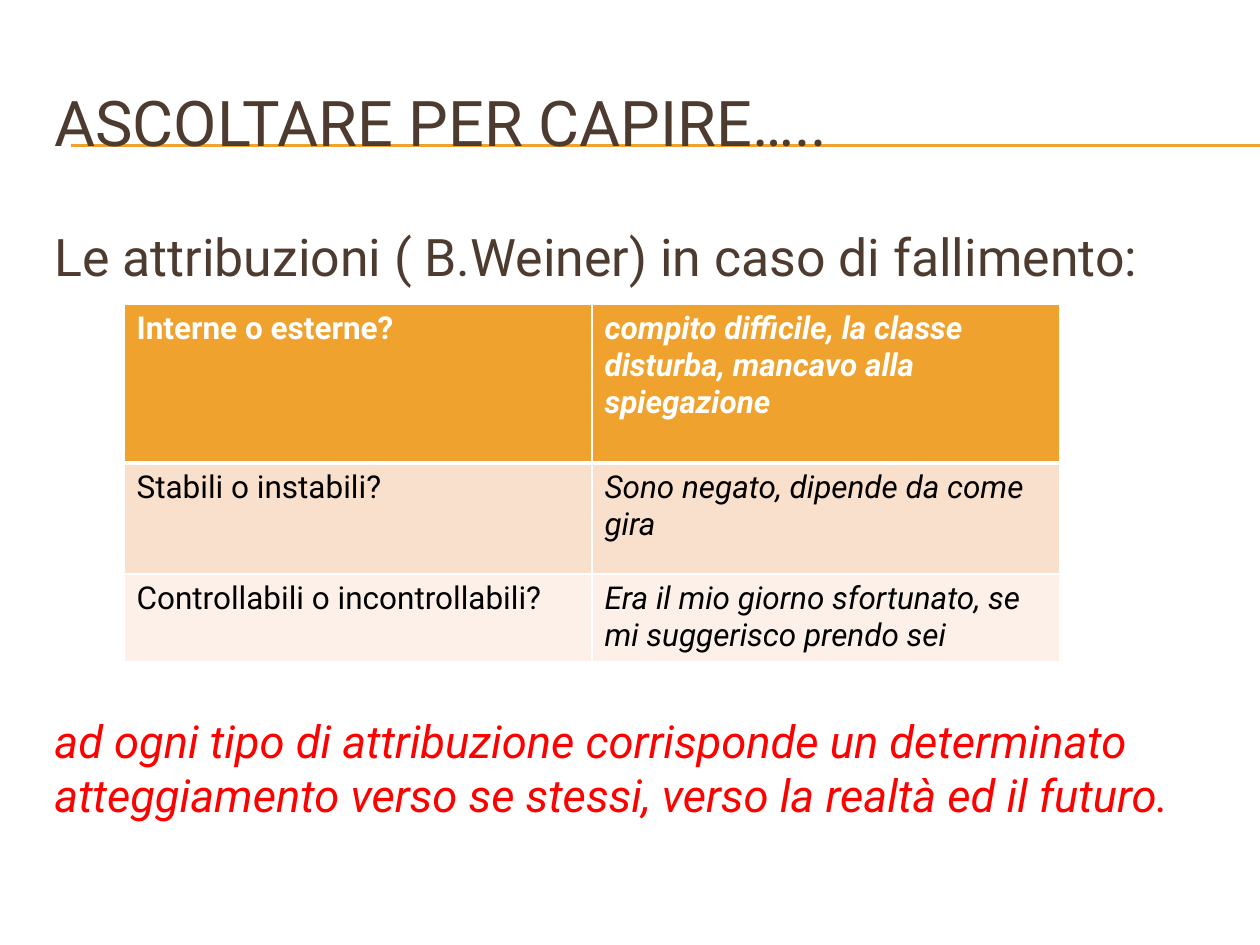
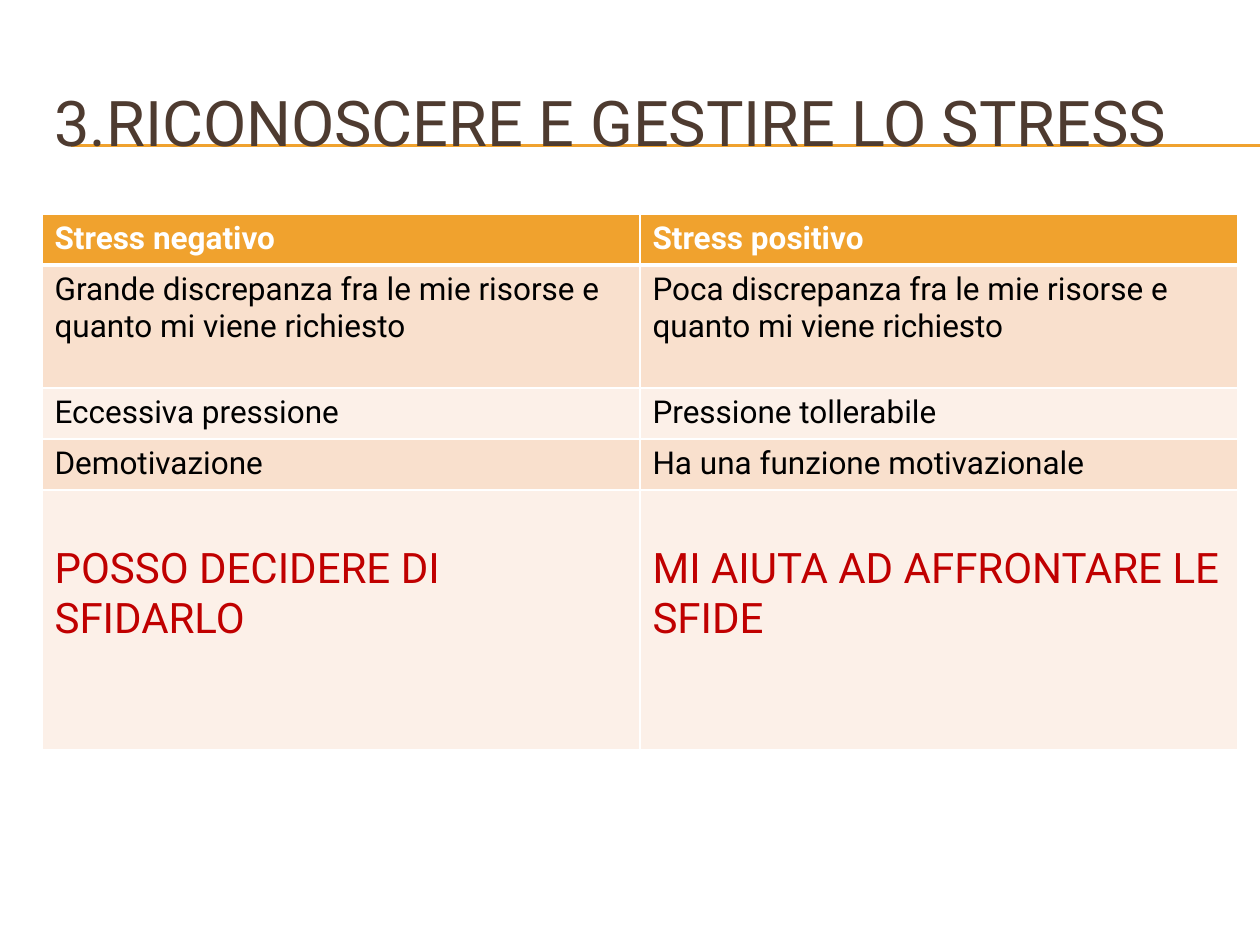
from lxml.etree import SubElement
from pptx import Presentation
from pptx.dml.color import RGBColor
from pptx.enum.shapes import MSO_CONNECTOR
from pptx.enum.text import MSO_ANCHOR as Anchor
from pptx.oxml.ns import qn
from pptx.util import Emu, Pt

PX = 914400 / 126
WIDTH, HEIGHT = 1260, 945
FONT = "Roboto"

WHITE = RGBColor(0xFF, 0xFF, 0xFF)
BLACK = RGBColor(0x00, 0x00, 0x00)
BROWN = RGBColor(0x4E, 0x3B, 0x30)
ORANGE = RGBColor(0xF0, 0xA2, 0x2E)
PEACH = RGBColor(0xF9, 0xE0, 0xCD)
CREAM = RGBColor(0xFC, 0xF0, 0xE8)
RED = RGBColor(0xFF, 0x00, 0x00)
DARK_RED = RGBColor(0xC0, 0x00, 0x00)

TITLE_BOX = (42, 63, 1197, 116)
RULE_LEFT, RULE_TOPS = 71, (145, 146)


def px(length):
    return Emu(round(length * PX))


def write(paragraph, text, size, color, bold=False, italic=False):
    paragraph.text = text
    font = paragraph.font
    font.name, font.size = FONT, Pt(size)
    font.bold, font.italic = bold, italic
    font.color.rgb = color


def add_text(slide, box, text, size, color, italic=False, anchor=Anchor.TOP):
    frame = slide.shapes.add_textbox(*map(px, box)).text_frame
    frame.word_wrap = True
    frame.vertical_anchor = anchor
    write(frame.paragraphs[0], text, size, color, italic=italic)


def add_titled_slide(presentation, title):
    slide = presentation.slides.add_slide(presentation.slide_layouts[6])
    # Double rule behind the title
    for top in RULE_TOPS:
        rule = slide.shapes.add_connector(
            MSO_CONNECTOR.STRAIGHT, px(RULE_LEFT), px(top), px(WIDTH), px(top))
        rule.line.color.rgb = ORANGE
        rule.line.width = Pt(0.75)
        SubElement(rule._element.spPr, qn("a:effectLst"))
    add_text(slide, TITLE_BOX, title, 36, BROWN, anchor=Anchor.MIDDLE)
    return slide


def add_borders(cell, top, bottom):
    properties = cell._tc.get_or_add_tcPr()
    for side, points in (("L", 1), ("R", 1), ("T", top), ("B", bottom)):
        line = SubElement(properties, qn(f"a:ln{side}"), w=str(Pt(points)))
        fill = SubElement(line, qn("a:solidFill"))
        SubElement(fill, qn("a:srgbClr"), val=str(WHITE))


def add_banded_table(slide, left, top, column_width, row_heights, rows,
                     italic_answers=False):
    """Two equal columns: an orange header, then alternating bands."""
    table = slide.shapes.add_table(
        len(rows), 2, px(left), px(top),
        px(2 * column_width), px(sum(row_heights))).table
    for column in table.columns:
        column.width = px(column_width)
    for index, (height, texts) in enumerate(zip(row_heights, rows)):
        table.rows[index].height = px(height)
        header = index == 0
        band = ORANGE if header else (CREAM, PEACH)[index % 2]
        for position, text in enumerate(texts):
            cell = table.cell(index, position)
            add_borders(cell, 3 if index == 1 else 1, 3 if header else 1)
            cell.fill.solid()
            cell.fill.fore_color.rgb = band
            write(cell.text_frame.paragraphs[0], text, 18,
                  WHITE if header else BLACK, bold=header,
                  italic=italic_answers and position == 1)
    return table


def add_attribution_slide(presentation):
    slide = add_titled_slide(presentation, "ASCOLTARE PER CAPIRE…..")
    # Introduction and conclusion around the table
    add_text(slide, (42, 219, 1197, 74),
             "Le attribuzioni ( B.Weiner) in caso di fallimento:", 29.6, BROWN)
    add_text(slide, (42, 707, 1197, 119),
             "ad ogni tipo di attribuzione corrisponde un determinato "
             "atteggiamento verso se stessi, verso la realtà ed il futuro.",
             25.9, RED, italic=True)
    add_banded_table(slide, 124, 304, 468, (159, 111, 86), (
        ("Interne o esterne?",
         "compito difficile, la classe disturba, mancavo alla spiegazione"),
        ("Stabili o instabili?", "Sono negato, dipende da come gira"),
        ("Controllabili o incontrollabili?",
         "Era il mio giorno sfortunato, se mi suggerisco prendo sei"),
    ), italic_answers=True)


def add_stress_slide(presentation):
    slide = add_titled_slide(presentation, "3.RICONOSCERE E GESTIRE LO STRESS")
    table = add_banded_table(slide, 42, 214, 598, (51, 123, 51, 51, 260), (
        ("Stress negativo", "Stress positivo"),
        ("Grande discrepanza fra le mie risorse e quanto mi viene richiesto",
         "Poca discrepanza fra le mie risorse e quanto mi viene richiesto"),
        ("Eccessiva pressione", "Pressione tollerabile"),
        ("Demotivazione", "Ha una funzione motivazionale"),
        ("POSSO DECIDERE DI SFIDARLO", "MI AIUTA AD AFFRONTARE LE SFIDE"),
    ))
    # Large red conclusions in the last row
    for cell in table.rows[4].cells:
        cell.margin_top = px(55)
        font = cell.text_frame.paragraphs[0].font
        font.size = Pt(24)
        font.color.rgb = DARK_RED


def main():
    presentation = Presentation()
    presentation.slide_width, presentation.slide_height = px(WIDTH), px(HEIGHT)
    add_attribution_slide(presentation)
    add_stress_slide(presentation)
    presentation.save("out.pptx")


if __name__ == "__main__":
    main()
